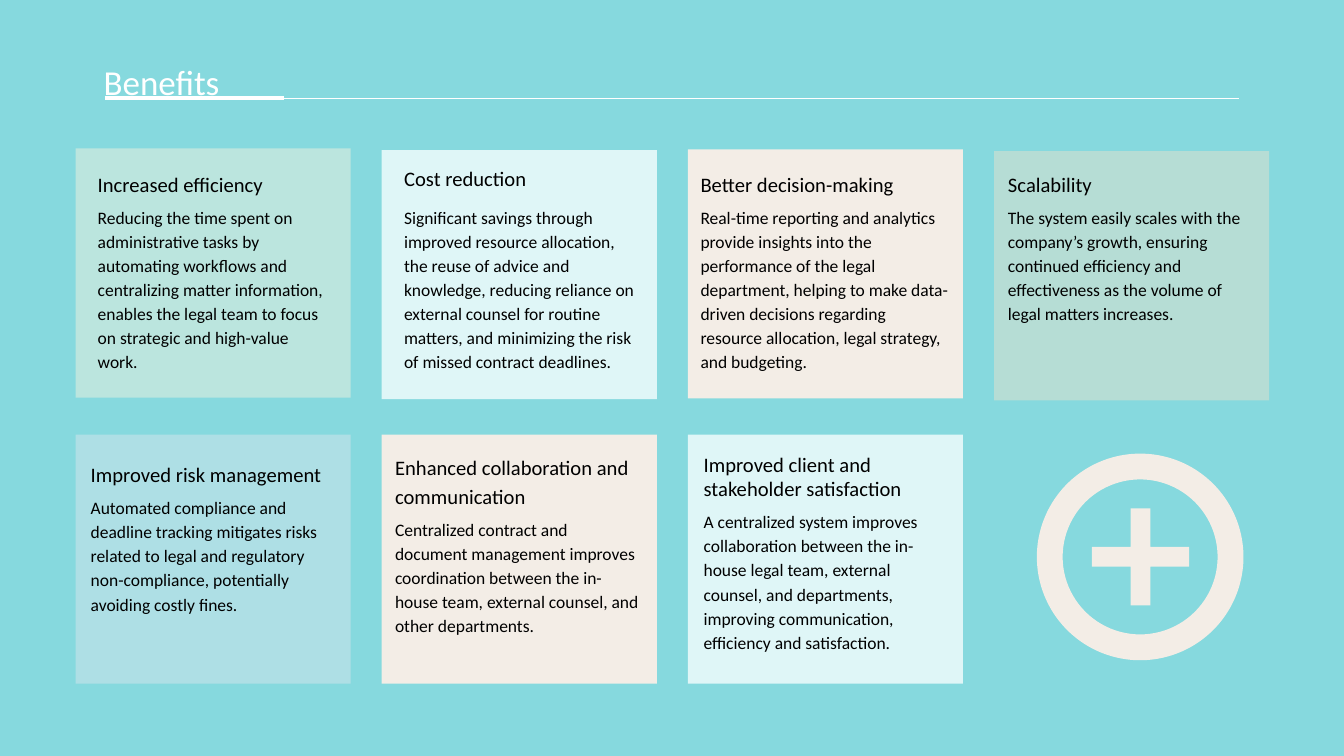
from dataclasses import dataclass

from lxml import etree
from pptx import Presentation
from pptx.dml.color import RGBColor
from pptx.enum.shapes import MSO_CONNECTOR, MSO_SHAPE
from pptx.enum.text import MSO_ANCHOR, MSO_AUTO_SIZE
from pptx.oxml.ns import qn
from pptx.util import Pt

STRAIGHT = MSO_CONNECTOR.STRAIGHT
RECTANGLE = MSO_SHAPE.RECTANGLE
PLUS = MSO_SHAPE.MATH_PLUS
DONUT = MSO_SHAPE.DONUT
TOP = MSO_ANCHOR.TOP
FIT_SHAPE = MSO_AUTO_SIZE.SHAPE_TO_FIT_TEXT


@dataclass(frozen=True)
class Theme:
    font: str = "Calibri"
    title_size: float = 25
    heading_size: float = 14.7
    body_size: float = 12.5
    background: str = "86D9DE"
    white: str = "FFFFFF"
    text: str = "000000"
    mint: str = "BBE5DE"
    ice: str = "DFF6F7"
    cream: str = "F3EDE6"
    sage: str = "B6DDD5"
    sky: str = "AEDFE5"


THEME = Theme()

# Card grid, in points
GRID_LEFT, COLUMN_STEP = 54, 218.7
ROW_TOPS = (106, 310.4)
CARD_WIDTH, CARD_HEIGHT = 196.5, 178


@dataclass(frozen=True)
class Box:
    left: float
    top: float
    width: float
    height: float


@dataclass(frozen=True)
class Card:
    column: int
    row: int
    fill: str
    text_box: Box
    heading: str
    body: str
    nudge: float = 0
    heading_spacing: float = 1.15
    before: float = 5
    after: float = 1.5


@dataclass(frozen=True)
class Rule:
    left: float
    right: float
    top: float
    weight: float


@dataclass(frozen=True)
class Icon:
    kind: int
    box: Box
    adjustment: float


RULES = (Rule(82.8, 884.9, 70.3, 0.82), Rule(74.9, 203, 70, 2.47))

CARDS = (
    Card(0, 0, THEME.mint, Box(66.2, 116.6, 172.1, 179.3), "Increased efficiency",
         "Reducing the time spent on administrative tasks by automating workflows and "
         "centralizing matter information, enables the legal team to focus on strategic "
         "and high-value work.", after=0),
    Card(1, 0, THEME.ice, Box(285, 115.2, 172.1, 164.9), "Cost reduction",
         "Significant savings through improved resource allocation, the reuse of advice "
         "and knowledge, reducing reliance on external counsel for routine matters, and "
         "minimizing the risk of missed contract deadlines.",
         nudge=1.2, heading_spacing=1, before=9, after=9),
    Card(2, 0, THEME.cream, Box(496.8, 116.6, 184.3, 157), "Better decision-making",
         "Real-time reporting and analytics provide insights into the performance of the "
         "legal department, helping to make data-driven decisions regarding resource "
         "allocation, legal strategy, and budgeting.", nudge=0.6),
    Card(3, 0, THEME.sage, Box(716.4, 116.6, 184.3, 121.7), "Scalability",
         "The system easily scales with the company’s growth, ensuring continued "
         "efficiency and effectiveness as the volume of legal matters increases.",
         nudge=2),
    Card(0, 1, THEME.sky, Box(61.2, 324, 172.1, 142.6), "Improved risk management",
         "Automated compliance and deadline tracking mitigates risks related to legal "
         "and regulatory non-compliance, potentially avoiding costly fines."),
    Card(1, 1, THEME.cream, Box(278.6, 319, 184.3, 142.6),
         "Enhanced collaboration and communication",
         "Centralized contract and document management improves coordination between "
         "the in-house team, external counsel, and other departments."),
    Card(2, 1, THEME.ice, Box(499, 319, 180, 154.8),
         "Improved client and stakeholder satisfaction",
         "A centralized system improves collaboration between the in-house legal team, "
         "external counsel, and departments, improving communication, efficiency and "
         "satisfaction.", heading_spacing=1),
)

ICONS = (
    Icon(PLUS, Box(767.5, 350.6, 94.3, 94.3), 0.149),
    Icon(DONUT, Box(740.6, 324, 147.6, 147.6), 0.125),
)


def rgb(color: str) -> RGBColor:
    return RGBColor.from_string(color)


def add_filled(slide, kind: int, box: Box, color: str):
    s = slide.shapes.add_shape(kind, Pt(box.left), Pt(box.top),
                               Pt(box.width), Pt(box.height))
    s.shadow.inherit = False
    s.fill.solid()
    s.fill.fore_color.rgb = rgb(color)
    s.line.fill.background()
    return s


def add_rule(slide, rule: Rule) -> None:
    s = slide.shapes.add_connector(STRAIGHT, Pt(rule.left), Pt(rule.top),
                                   Pt(rule.right), Pt(rule.top))
    s.line.color.rgb = rgb(THEME.white)
    s.line.width = Pt(rule.weight)
    etree.SubElement(s._element.spPr, qn("a:effectLst"))


def add_text_frame(slide, box: Box, inset_x: float, inset_y: float):
    s = slide.shapes.add_textbox(Pt(box.left), Pt(box.top),
                                 Pt(box.width), Pt(box.height))
    tf = s.text_frame
    tf.word_wrap = True
    tf.vertical_anchor = TOP
    tf.margin_left = tf.margin_right = Pt(inset_x)
    tf.margin_top = tf.margin_bottom = Pt(inset_y)
    return tf


def set_paragraph(p, text: str, size: float, color: str, spacing: float = 1.15) -> None:
    p.text = text
    p.line_spacing = spacing
    r = p.runs[0]
    r.font.name = THEME.font
    r.font.size = Pt(size)
    r.font.color.rgb = rgb(color)


def add_card_panel(slide, card: Card) -> None:
    box = Box(GRID_LEFT + card.column * COLUMN_STEP, ROW_TOPS[card.row] + card.nudge,
              CARD_WIDTH, CARD_HEIGHT)
    add_filled(slide, RECTANGLE, box, card.fill)


def add_card_text(slide, card: Card) -> None:
    tf = add_text_frame(slide, card.text_box, 3.6, 3.6)
    tf.auto_size = FIT_SHAPE
    set_paragraph(tf.paragraphs[0], card.heading, THEME.heading_size, THEME.text,
                  card.heading_spacing)
    p = tf.add_paragraph()
    set_paragraph(p, card.body, THEME.body_size, THEME.text)
    p.space_before = Pt(card.before)
    p.space_after = Pt(card.after)


def main() -> None:
    prs = Presentation()
    prs.slide_width, prs.slide_height = Pt(960), Pt(540)
    slide = prs.slides.add_slide(prs.slide_layouts[6])
    slide.background.fill.solid()
    slide.background.fill.fore_color.rgb = rgb(THEME.background)

    # Title and its rules
    for rule in RULES:
        add_rule(slide, rule)
    tf = add_text_frame(slide, Box(69.8, 36.7, 454.3, 31), 4.3, 2.2)
    set_paragraph(tf.paragraphs[0], "Benefits", THEME.title_size, THEME.white)

    # Benefit cards
    for card in CARDS:
        add_card_panel(slide, card)
        add_card_text(slide, card)

    # Plus sign in a ring
    for icon in ICONS:
        s = add_filled(slide, icon.kind, icon.box, THEME.cream)
        s.adjustments[0] = icon.adjustment

    prs.save("out.pptx")


if __name__ == "__main__":
    main()
